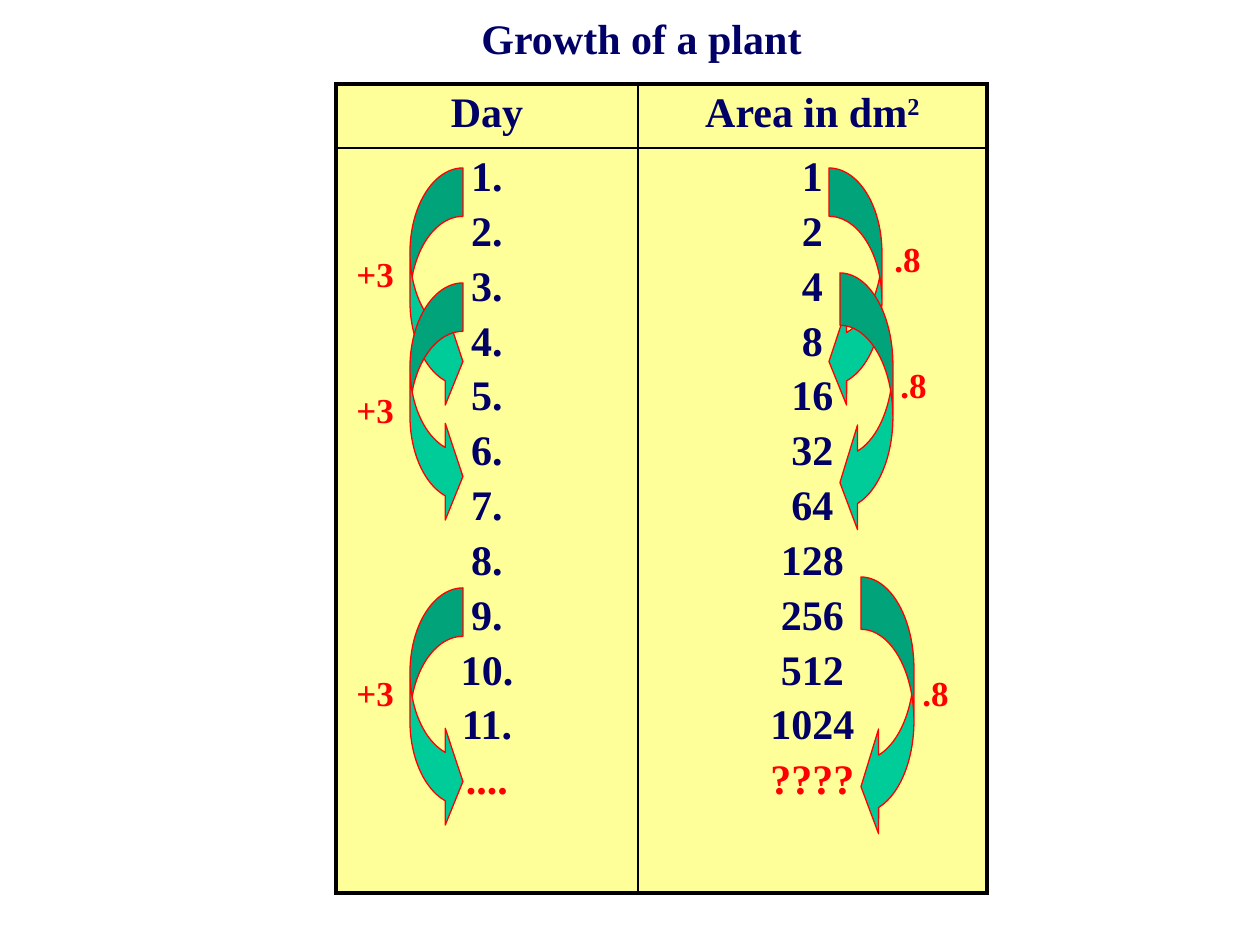
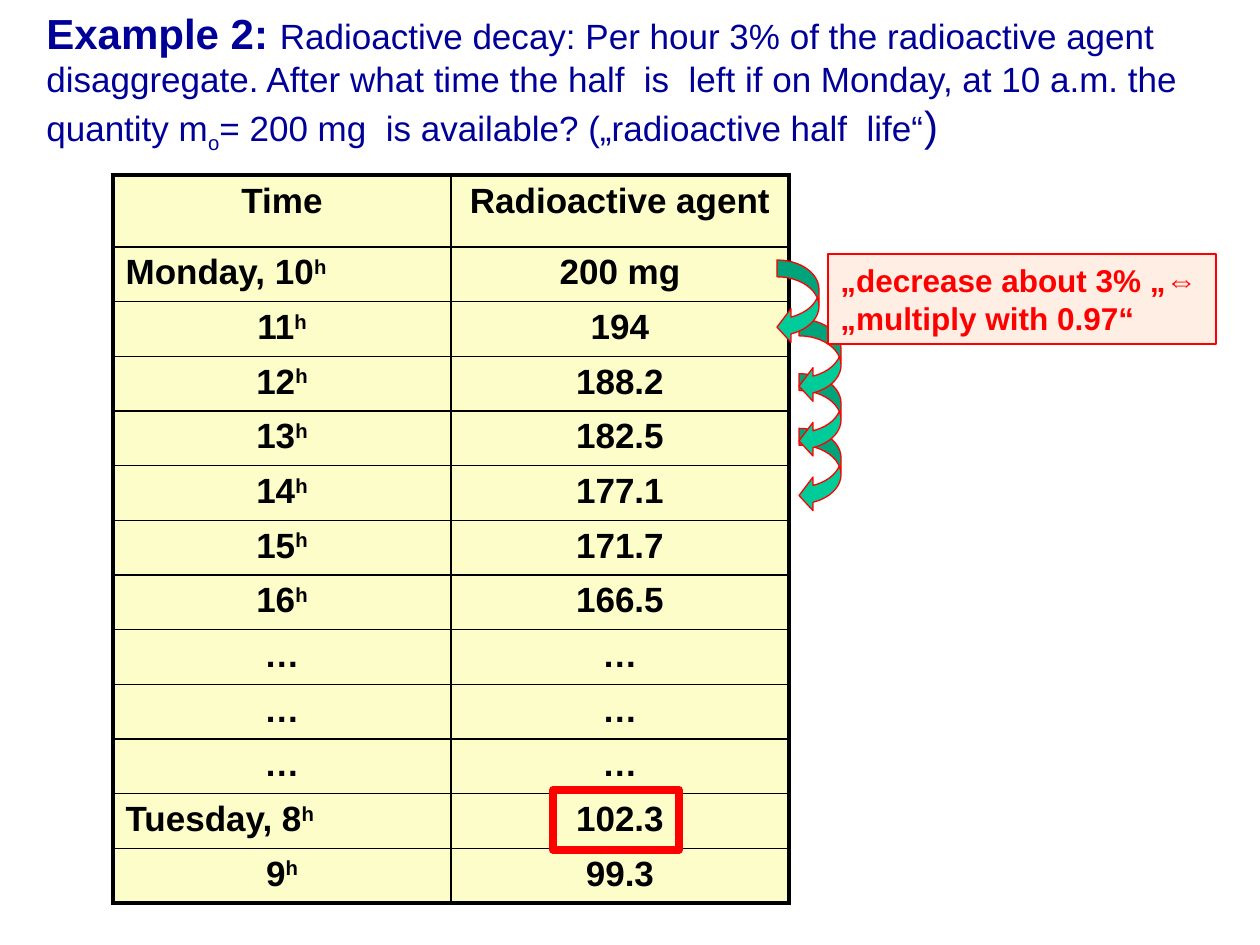
from itertools import chain, product

from lxml import etree
from pptx import Presentation
from pptx import util as u
from pptx.dml.color import RGBColor
from pptx.enum import shapes, text
from pptx.oxml.ns import qn

# Shared look
SERIF, SANS = "Times New Roman", "Arial"
NAVY, BLUE, BLACK, RED = "000066", "000099", "000000", "FF0000"
GREEN, YELLOW, CREAM, BLUSH = "00CC99", "FFFF99", "FCFDC9", "FFEEE3"
THICK, THIN = 2.25, 1
LEFT_ARROW = shapes.MSO_SHAPE.CURVED_LEFT_ARROW
RIGHT_ARROW = shapes.MSO_SHAPE.CURVED_RIGHT_ARROW

# Slide 1 content: the last line of each column is an open question
DAYS = [f"{day}." for day in range(1, 12)] + ["...."]
AREAS = [str(2 ** step) for step in range(11)] + ["????"]
GROWTH_ROWS = [(["Day"], ["Area in dm^2"]), (DAYS, AREAS)]
OPEN_LINES = ("....", "????")
DAY_STEPS = [(168, 246), (283, 382), (588, 665)]  # arrow top, label top
AREA_STEPS = [  # arrow left, top, height; label left, top
    (829, 168, 242, 882, 231),
    (840, 273, 262, 888, 357),
    (861, 577, 262, 910, 665),
]

# Slide 2 content: "^" starts a superscript
DECAY_TASK = [
    ("Example 2: ", 24, True, 0),
    ("Radioactive decay: Per hour 3% of the radioactive agent disaggregate. "
     "After what time the half  is  left if on Monday, at 10 a.m. the quantity m",
     20, False, 0),
    ("o", 20, False, -25),
    ("= 200 mg  is available? („radioactive half  life“", 20, False, 0),
    (")", 24, False, 0),
]
DECAY = [
    ("Time", "Radioactive agent"),
    ("Monday, 10^h", "200 mg"),
    ("11^h", "194"),
    ("12^h", "188.2"),
    ("13^h", "182.5"),
    ("14^h", "177.1"),
    ("15^h", "171.7"),
    ("16^h", "166.5"),
    ("…", "…"),
    ("…", "…"),
    ("…", "…"),
    ("Tuesday, 8^h", "102.3"),
    ("9^h", "99.3"),
]
DECAY_HINT = ["„decrease about 3% „⇔", "„multiply with 0.97“"]
HEADER_HEIGHT, DECAY_ROW = 72, 656 / 12


def px(length):
    return u.Emu(round(length * 914400 / 126))


def area(*lengths):
    return [px(length) for length in lengths]


def rgb(colour):
    return RGBColor.from_string(colour)


def add_span(para, words, size, font, colour, bold=True, baseline=0):
    span = para.add_run()
    span.text = words
    span.font.size = u.Pt(size)
    span.font.name = font
    span.font.bold = bold
    span.font.color.rgb = rgb(colour)
    if baseline:
        span.font._element.set("baseline", str(baseline * 1000))


def add_lines(frame, lines):
    """Yield one paragraph for each line of text."""
    for index, line in enumerate(lines):
        yield (frame.add_paragraph() if index else frame.paragraphs[0]), line


def add_text_box(page, left, top, width, height, wrap=False):
    frame = page.shapes.add_textbox(*area(left, top, width, height)).text_frame
    frame.word_wrap = wrap
    frame.auto_size = text.MSO_AUTO_SIZE.SHAPE_TO_FIT_TEXT
    return frame.paragraphs[0]


def add_box(page, kind, place, fill, line_width=0.75):
    box = page.shapes.add_shape(kind, *area(*place))
    box.shadow.inherit = False
    if fill:
        box.fill.solid()
        box.fill.fore_color.rgb = rgb(fill)
    else:
        box.fill.background()
    box.line.color.rgb = rgb(RED)
    box.line.width = u.Pt(line_width)
    return box


def add_curved_arrow(page, kind, left, top, width, height):
    arrow = add_box(page, kind, (left, top, width, height), GREEN)
    band = 0.2 * height / width
    for index, value in enumerate((band, 2 * band, 0.333)):
        arrow.adjustments[index] = value


def set_borders(cell, widths):
    """Draw the left, right, top and bottom border, in that order."""
    properties = cell._tc.get_or_add_tcPr()
    for index, (side, width) in enumerate(zip("LRTB", widths)):
        line = etree.Element(qn(f"a:ln{side}"), w=str(u.Pt(width)))
        fill = etree.SubElement(line, qn("a:solidFill"))
        etree.SubElement(fill, qn("a:srgbClr"), val=BLACK)
        properties.insert(index, line)


def fill_cell(cell, lines, size, font, colour):
    for para, line in add_lines(cell.text_frame, lines):
        starts_day = "," in line
        para.alignment = text.PP_ALIGN.LEFT if starts_day else text.PP_ALIGN.CENTER
        spacing = etree.SubElement(para._p.get_or_add_pPr(), qn("a:spcBef"))
        etree.SubElement(spacing, qn("a:spcPct"), val="20000")
        ink = RED if line in OPEN_LINES else colour
        base, _, raised = line.partition("^")
        add_span(para, base, size, font, ink)
        if raised:
            add_span(para, raised, size, font, ink, baseline=30)


def add_grid(page, left, top, widths, heights, rows, fill, style):
    """Table with a thick frame and thin inner lines."""
    frame = page.shapes.add_table(len(heights), len(widths),
                                  *area(left, top, sum(widths), sum(heights)))
    table = frame.table
    table.first_row = table.horz_banding = False
    for part, length in chain(zip(table.columns, widths)):
        part.width = px(length)
    for part, length in zip(table.rows, heights):
        part.height = px(length)
    last_row, last_column = len(heights) - 1, len(widths) - 1
    for row, column in product(range(len(heights)), range(len(widths))):
        cell = table.cell(row, column)
        cell.fill.solid()
        cell.fill.fore_color.rgb = rgb(fill)
        outer = (column == 0, column == last_column, row == 0, row == last_row)
        set_borders(cell, [THICK if edge else THIN for edge in outer])
        fill_cell(cell, rows[row][column], *style)


def build_growth(page):
    add_grid(page, 336, 84, [302, 349], [64, 745], GROWTH_ROWS, YELLOW,
             (24, SERIF, NAVY))
    title = add_text_box(page, 469, 6, 349, 64)
    add_span(title, "Growth of a plant", 24, SERIF, NAVY)

    # Steps of three days, and the matching factors
    for arrow_top, label_top in DAY_STEPS:
        add_curved_arrow(page, RIGHT_ARROW, 410, arrow_top, 53, 242)
        label = add_text_box(page, 344, label_top, 63, 54)
        add_span(label, "+3", 20, SERIF, RED)
    for left, top, height, label_left, label_top in AREA_STEPS:
        add_curved_arrow(page, LEFT_ARROW, left, top, 53, height)
        label = add_text_box(page, label_left, label_top, 52, 54)
        add_span(label, ".8", 20, SERIF, RED)


def build_decay(page):
    # Hourly steps beside the table, lowest at the back
    for step in (2, 1, 0):
        add_curved_arrow(page, LEFT_ARROW, 799, 319 + step * DECAY_ROW, 42, 84)

    task = add_text_box(page, 34, 1, 1198, 156, wrap=True)
    for words, size, bold, baseline in DECAY_TASK:
        add_span(task, words, size, SANS, BLUE, bold, baseline)

    rows = [[[entry] for entry in row] for row in DECAY]
    heights = [HEADER_HEIGHT] + [DECAY_ROW] * (len(DECAY) - 1)
    add_grid(page, 113, 175, [338, 338], heights, rows, CREAM, (20, SANS, BLACK))

    # First step with its explanation
    add_curved_arrow(page, LEFT_ARROW, 777, 260, 42, 84)
    hint = add_box(page, shapes.MSO_SHAPE.RECTANGLE, (828, 254, 388, 90), BLUSH)
    hint.text_frame.word_wrap = False
    for para, line in add_lines(hint.text_frame, DECAY_HINT):
        para.alignment = text.PP_ALIGN.LEFT
        add_span(para, line, 18, SANS, RED)

    # Frame around the value nearest to half
    add_box(page, shapes.MSO_SHAPE.RECTANGLE, (553, 790, 126, 60), None, 4.5)


def main():
    deck = Presentation()
    deck.slide_width, deck.slide_height = area(1260, 945)
    for build in (build_growth, build_decay):
        build(deck.slides.add_slide(deck.slide_layouts[6]))
    deck.save("out.pptx")


if __name__ == "__main__":
    main()
